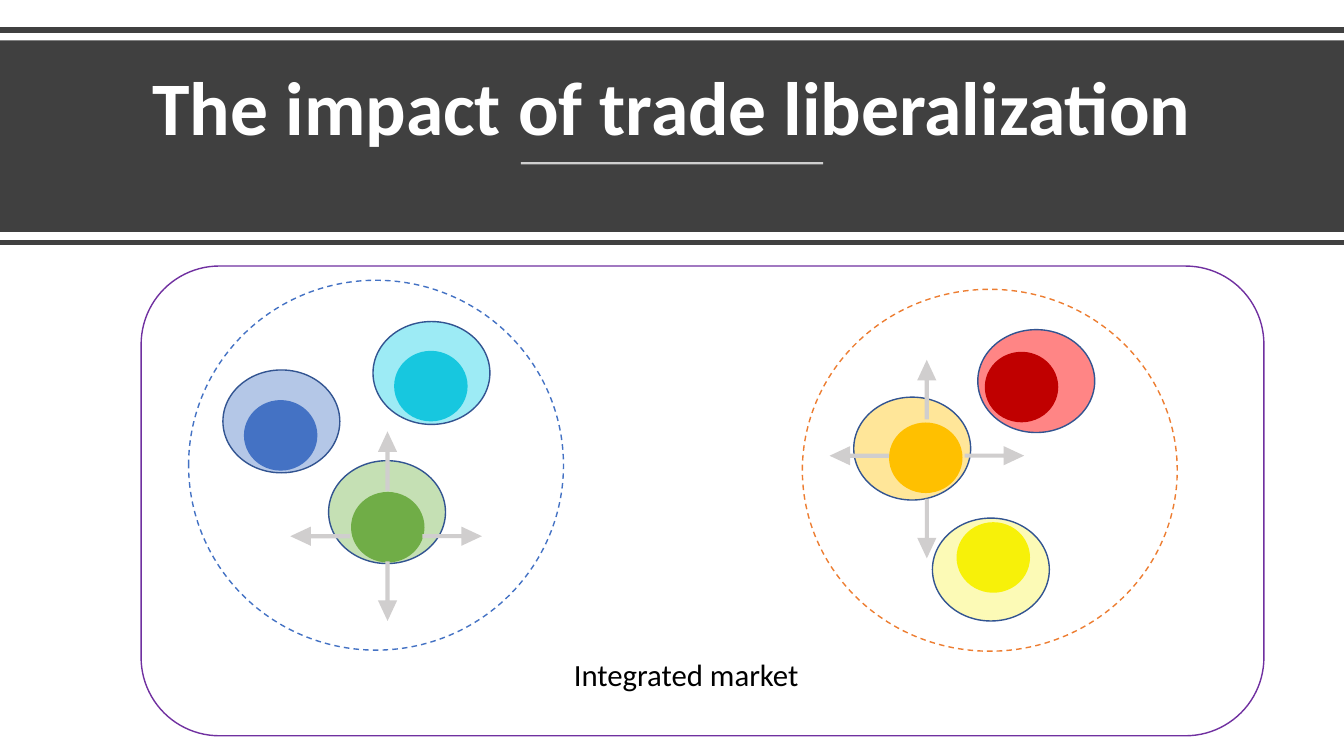
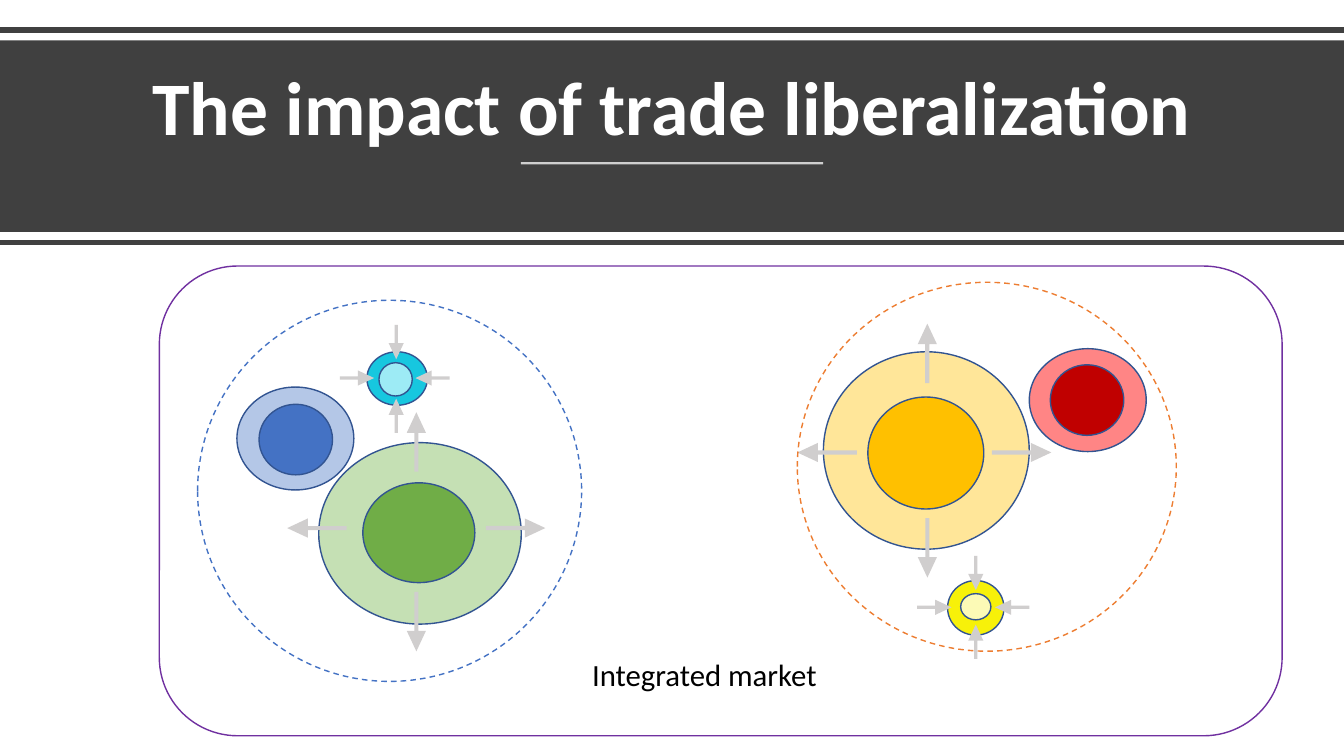
import pptx
import pptx.util
import pptx.dml.color
import pptx.enum.dml
import pptx.enum.shapes
import pptx.enum.text
import pptx.oxml
import pptx.oxml.ns
from lxml import etree

Pt = pptx.util.Pt
Shape = pptx.enum.shapes.MSO_SHAPE
qn = pptx.oxml.ns.qn

# Shared style
FONT = "Calibri"
DARK = "404040"
WHITE = "FFFFFF"
OUTLINE = "325491"
ARROW = "D0CECE"
FRAME = "7030A0"
MARKET_LINES = ("4472C4", "ED7D31")
PALE = {"blue": "B4C7E7", "green": "C5E0B4", "yellow": "FCFAB6",
        "orange": "FFE699", "cyan": "9DEBF5", "red": "FF8585"}
STRONG = {"blue": "4472C4", "green": "70AD47", "yellow": "F7F109",
          "orange": "FFC000", "cyan": "17C7DF", "red": "C00000"}
WIDTH, HEIGHT = 960, 540
OUTER = (83.5, 73.5)
INNER = (52.5, 50.4)
BIG_ARROW = (42.5, 13.7)
SMALL_ARROW = (24.5, 10.8)

# Ellipses are (center x, center y, width, height).
# Arrows are (center x, center y, left x, right x, top y, bottom y).
slide_data = [
    {
        "frame_left": 100.8,
        "core_outline": None,
        "firms": [
            ("blue", (201, 301, *OUTER), (200.5, 311, *INNER)),
            ("green", (276.5, 365.8, *OUTER), (277, 376.6, *INNER)),
            ("yellow", (707.8, 406.8, *OUTER), (709.5, 398.2, *INNER)),
            ("orange", (651.6, 320.4, *OUTER), (661.3, 327, *INNER)),
            ("cyan", (308.2, 266.4, *OUTER), (307.8, 275.8, *INNER)),
            ("red", (740.2, 272.2, *OUTER), (729.7, 276.5, *INNER)),
        ],
        "growing": [(276.8, 383, 228.6, 323, 329.4, 422.3),
                    (662, 325.5, 613.8, 710.3, 278.3, 377.6)],
        "shrinking": [],
        "markets": [(268.6, 332.3, 267.8, 264.2), (707, 335.9, 267.8, 258.5)],
    },
    {
        "frame_left": 113.8,
        "core_outline": OUTLINE,
        "firms": [
            ("blue", (211, 313.2, *OUTER), (211.3, 314, *INNER)),
            ("green", (300, 381, 144.7, 129.6), (299.2, 380.5, 80, 71.3)),
            ("cyan", (283.7, 270.4, 43.2, 38.2), (282.6, 271, 23.8, 23.8)),
            ("orange", (661.7, 321.8, 147, 141), (661.3, 323.6, 82.8, 80)),
            ("red", (777, 285.8, *OUTER), (776.5, 285.8, *INNER)),
            ("yellow", (697, 434.2, 40.3, 39), (697, 433.4, 21.6, 18.7)),
        ],
        "growing": [(297.4, 377.2, 226.4, 368.3, 315.7, 444),
                    (662.4, 323.2, 590.8, 729.7, 252.4, 391.3)],
        "shrinking": [(283, 270, 255, 309, 244.4, 297),
                      (697, 433.8, 667.4, 723, 409.3, 458.3)],
        "markets": [(278.3, 350.6, 274.3, 272.2), (704.9, 333.4, 270.7, 263.5)],
    },
]


def color(hex_value):
    return pptx.dml.color.RGBColor.from_string(hex_value)


def add_centered(slide, kind, box, fill=None, line=None):
    x, y, width, height = box
    shape = slide.shapes.add_shape(kind, Pt(x - width / 2), Pt(y - height / 2),
                                   Pt(width), Pt(height))
    shape.shadow.inherit = False
    if fill:
        shape.fill.solid()
        shape.fill.fore_color.rgb = color(fill)
    else:
        shape.fill.background()
    if line:
        shape.line.color.rgb = color(line)
        shape.line.width = Pt(1)
    else:
        shape.line.fill.background()
    return shape


presentation = pptx.Presentation()
presentation.slide_width = Pt(WIDTH)
presentation.slide_height = Pt(HEIGHT)

for data in slide_data:
    slide = presentation.slides.add_slide(presentation.slide_layouts[5])

    # Title on its band
    band = add_centered(slide, Shape.RECTANGLE, (WIDTH / 2, 97.2, WIDTH, 136.8), DARK)
    title = slide.shapes.title
    title.element.addprevious(band.element)
    title.left, title.top, title.width, title.height = Pt(16.6), Pt(39), Pt(926.6), Pt(73.4)
    title.text_frame.text = "The impact of trade liberalization"
    title.text_frame.auto_size = pptx.enum.text.MSO_AUTO_SIZE.NONE
    title.text_frame.vertical_anchor = pptx.enum.text.MSO_ANCHOR.BOTTOM
    paragraph = title.text_frame.paragraphs[0]
    paragraph.alignment = pptx.enum.text.PP_ALIGN.CENTER
    paragraph.line_spacing = 0.9
    paragraph.font.name = FONT
    paragraph.font.size = Pt(54)
    paragraph.font.bold = True
    paragraph.font.color.rgb = color(WHITE)

    # Rules around the band and under the title
    for left, right, y, line_color, weight, opacity in (
            (0, WIDTH, 21.6, DARK, 4, 100),
            (0, WIDTH, 173.3, DARK, 4, 100),
            (372, 588, 116.6, WHITE, 1.5, 75)):
        rule = slide.shapes.add_connector(pptx.enum.shapes.MSO_CONNECTOR.STRAIGHT,
                                          Pt(left), Pt(y), Pt(right), Pt(y))
        rule.line.color.rgb = color(line_color)
        rule.line.width = Pt(weight)
        properties = rule.element.spPr
        etree.SubElement(properties, qn("a:effectLst"))
        if opacity < 100:
            alpha = etree.SubElement(next(properties.iter(qn("a:srgbClr"))), qn("a:alpha"))
            alpha.set("val", str(opacity * 1000))

    # Firms: a ring with a core; shrinking firms swap their shades
    for name, ring, core in data["firms"]:
        shades = PALE[name], STRONG[name]
        if ring[2] < OUTER[0]:
            shades = shades[::-1]
        add_centered(slide, Shape.OVAL, ring, shades[0], OUTLINE)
        add_centered(slide, Shape.OVAL, core, shades[1], data["core_outline"])

    # Arrows: outward for growth, inward for decline
    for group, size, turn in (("growing", BIG_ARROW, 0), ("shrinking", SMALL_ARROW, 180)):
        for center_x, center_y, left, right, top, bottom in data[group]:
            for x, y, angle in ((right, center_y, 0), (center_x, bottom, 90),
                                (left, center_y, 180), (center_x, top, 270)):
                arrow = add_centered(slide, Shape.RIGHT_ARROW, (x, y, *size), ARROW)
                arrow.rotation = (angle + turn) % 360
                arrow.adjustments[0] = 0.215
                arrow.adjustments[1] = 1.07

    # Separate markets inside the integrated market
    for market, line_color in zip(data["markets"], MARKET_LINES):
        circle = add_centered(slide, Shape.OVAL, market, line=line_color)
        circle.line.dash_style = pptx.enum.dml.MSO_LINE.DASH
    frame_left = data["frame_left"]
    add_centered(slide, Shape.ROUNDED_RECTANGLE,
                 (frame_left + 401, 357.8, 802, 335.5), line=FRAME)

    # Caption
    caption = slide.shapes.add_textbox(Pt(frame_left + 302), Pt(465), Pt(190), Pt(34))
    caption.text_frame.word_wrap = True
    caption.text_frame.text = "Integrated market"
    paragraph = caption.text_frame.paragraphs[0]
    paragraph.font.name = FONT
    paragraph.font.size = Pt(22)
    paragraph.font.color.rgb = color("000000")

presentation.save("out.pptx")
